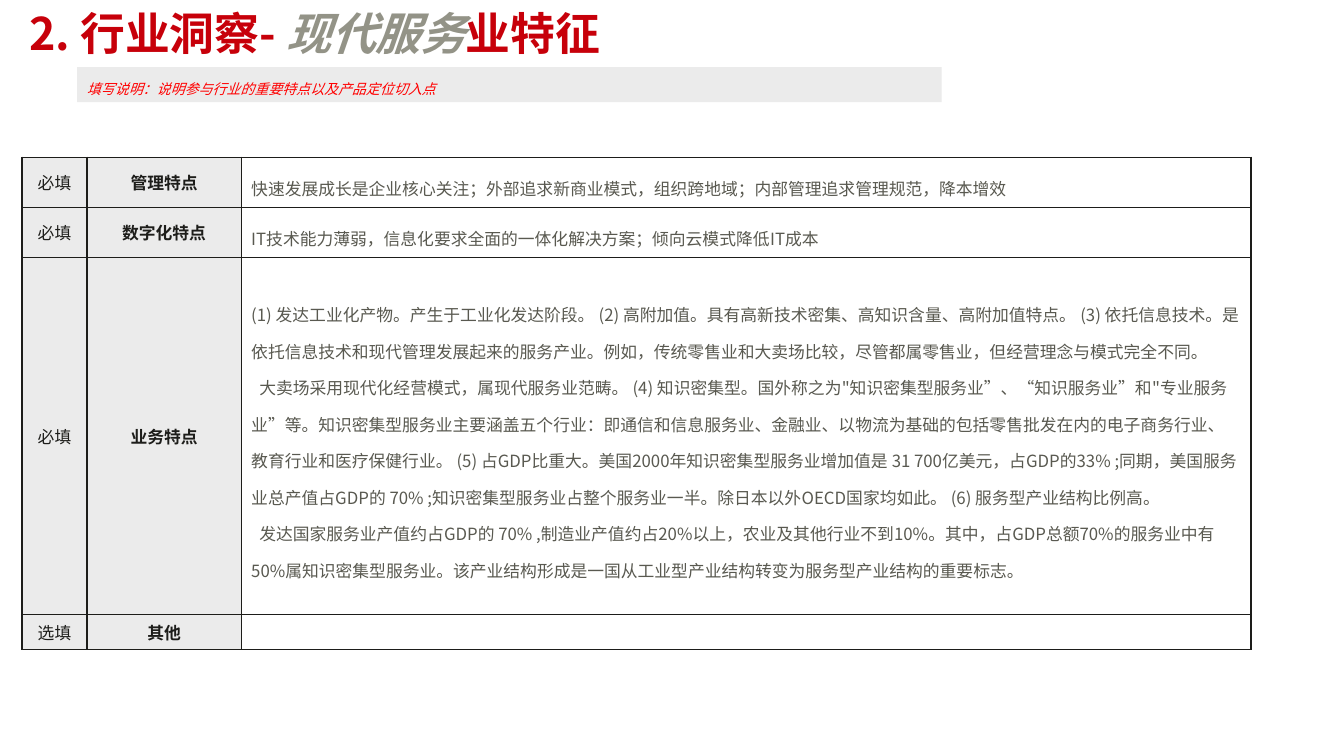
import dataclasses

import lxml.etree
import pptx
import pptx.dml.color
import pptx.enum.shapes
import pptx.enum.text
import pptx.oxml.ns
import pptx.util

SCALE = 9080


@dataclasses.dataclass(frozen=True)
class Theme:
    red: str = "C7000A"
    hint: str = "FF0000"
    stone: str = "939387"
    ink: str = "1D1D1A"
    text: str = "595950"
    pale: str = "EBEBEB"
    white: str = "FFFFFF"
    sans: str = "Noto Sans CJK SC"
    latin: str = "Calibri"
    head: int = 32
    body: int = 12
    note: int = 10


THEME = Theme()
ALIGN = pptx.enum.text.PP_ALIGN
ANCHOR = pptx.enum.text.MSO_ANCHOR

TITLE = [
    ("2. 行业洞察- ", THEME.red, False),
    ("现代服务", THEME.stone, True),
    ("业特征", THEME.red, False),
]
HINT = "填写说明：说明参与行业的重要特点以及产品定位切入点"
TRAITS = "\n".join([
    "(1) 发达工业化产物。产生于工业化发达阶段。 (2) 高附加值。具有高新技术密集、高知识含量、高附加值特点。"
    " (3) 依托信息技术。是依托信息技术和现代管理发展起来的服务产业。例如，传统零售业和大卖场比较，"
    "尽管都属零售业，但经营理念与模式完全不同。",
    "大卖场采用现代化经营模式，属现代服务业范畴。 (4) 知识密集型。国外称之为\"知识密集型服务业”、"
    "“知识服务业”和\"专业服务业”等。知识密集型服务业主要涵盖五个行业：即通信和信息服务业、金融业、"
    "以物流为基础的包括零售批发在内的电子商务行业、教育行业和医疗保健行业。 (5) 占GDP比重大。"
    "美国2000年知识密集型服务业增加值是 31 700亿美元，占GDP的33% ;同期，美国服务业总产值占GDP的 70% ;"
    "知识密集型服务业占整个服务业一半。除日本以外OECD国家均如此。 (6) 服务型产业结构比例高。",
    "发达国家服务业产值约占GDP的 70% ,制造业产值约占20%以上，农业及其他行业不到10%。其中，"
    "占GDP总额70%的服务业中有50%属知识密集型服务业。该产业结构形成是一国从工业型产业结构转变为"
    "服务型产业结构的重要标志。",
])
ROWS = [
    (50, "必填", "管理特点", "快速发展成长是企业核心关注；外部追求新商业模式，组织跨地域；内部管理追求管理规范，降本增效"),
    (50, "必填", "数字化特点", "IT技术能力薄弱，信息化要求全面的一体化解决方案；倾向云模式降低IT成本"),
    (357, "必填", "业务特点", TRAITS),
    (34, "选填", "其他", ""),
]
COLS = [65, 154, 1009]


def px(num):
    return pptx.util.Emu(num * SCALE)


def rgb(code):
    return pptx.dml.color.RGBColor.from_string(code)


def add_tag(node, tag, **attrs):
    return lxml.etree.SubElement(node, pptx.oxml.ns.qn(tag), **attrs)


def style(run, size, color, face=THEME.sans, bold=False, slant=False):
    font = run.font
    font.size = pptx.util.Pt(size)
    font.bold, font.italic = bold, slant
    font.color.rgb = rgb(color)
    font.name = face
    add_tag(font._element, "a:ea", typeface=face)


def add_title(slide):
    title = slide.shapes.title
    title.left, title.top, title.width, title.height = map(px, (29, 11, 1220, 64))
    frame = title.text_frame
    frame.margin_left = frame.margin_right = frame.margin_top = frame.margin_bottom = 0
    frame.vertical_anchor = ANCHOR.TOP
    frame.auto_size = pptx.enum.text.MSO_AUTO_SIZE.NONE
    line = frame.paragraphs[0]
    line.alignment = ALIGN.LEFT
    line.line_spacing = pptx.util.Pt(34.3)
    for words, color, slant in TITLE:
        run = line.add_run()
        run.text = words
        style(run, THEME.head, color, bold=True, slant=slant)


def add_hint(slide):
    kind = pptx.enum.shapes.MSO_SHAPE.RECTANGLE
    band = slide.shapes.add_shape(kind, *map(px, (77, 67, 864, 35)))
    band.shadow.inherit = False
    band.fill.solid()
    band.fill.fore_color.rgb = rgb(THEME.pale)
    band.line.fill.background()
    frame = band.text_frame
    frame.word_wrap = True
    frame.vertical_anchor = ANCHOR.TOP
    frame.text = HINT
    line = frame.paragraphs[0]
    line.alignment = ALIGN.LEFT
    line.line_spacing = 1.5
    style(line.runs[0], THEME.note, THEME.hint, THEME.latin, slant=True)


def add_edge(cell):
    props = cell._tc.get_or_add_tcPr()
    for side in ("a:lnL", "a:lnR", "a:lnT", "a:lnB"):
        edge = add_tag(props, side, w=str(pptx.util.Pt(1)))
        add_tag(add_tag(edge, "a:solidFill"), "a:srgbClr", val=THEME.ink)


def fill_cell(cell, words, label, bold):
    add_edge(cell)
    cell.fill.solid()
    cell.fill.fore_color.rgb = rgb(THEME.pale if label else THEME.white)
    cell.vertical_anchor = ANCHOR.MIDDLE
    cell.text_frame.text = words
    for rank, line in enumerate(cell.text_frame.paragraphs):
        line.alignment = ALIGN.CENTER if label else ALIGN.LEFT
        if not label and words:
            line.line_spacing = 1.5
        if rank:
            line._p.get_or_add_pPr().set("indent", str(px(8)))
        for run in line.runs:
            style(run, THEME.body, THEME.ink if label else THEME.text, bold=bold)
        if not words:
            add_tag(line._p, "a:endParaRPr", sz=str(THEME.body * 100))


def add_grid(slide):
    high = sum(row[0] for row in ROWS)
    place = map(px, (22, 157, sum(COLS), high))
    grid = slide.shapes.add_table(len(ROWS), len(COLS), *place).table
    grid.first_row = grid.horz_banding = False
    for col, wide in zip(grid.columns, COLS):
        col.width = px(wide)
    for row, (tall, *words) in zip(grid.rows, ROWS):
        row.height = px(tall)
        for rank, (cell, text) in enumerate(zip(row.cells, words)):
            fill_cell(cell, text, label=rank < 2, bold=rank == 1)


def main():
    deck = pptx.Presentation()
    deck.slide_width, deck.slide_height = px(1343), px(755)
    slide = deck.slides.add_slide(deck.slide_layouts[5])
    add_title(slide)
    add_hint(slide)
    add_grid(slide)
    deck.save("out.pptx")


if __name__ == "__main__":
    main()
